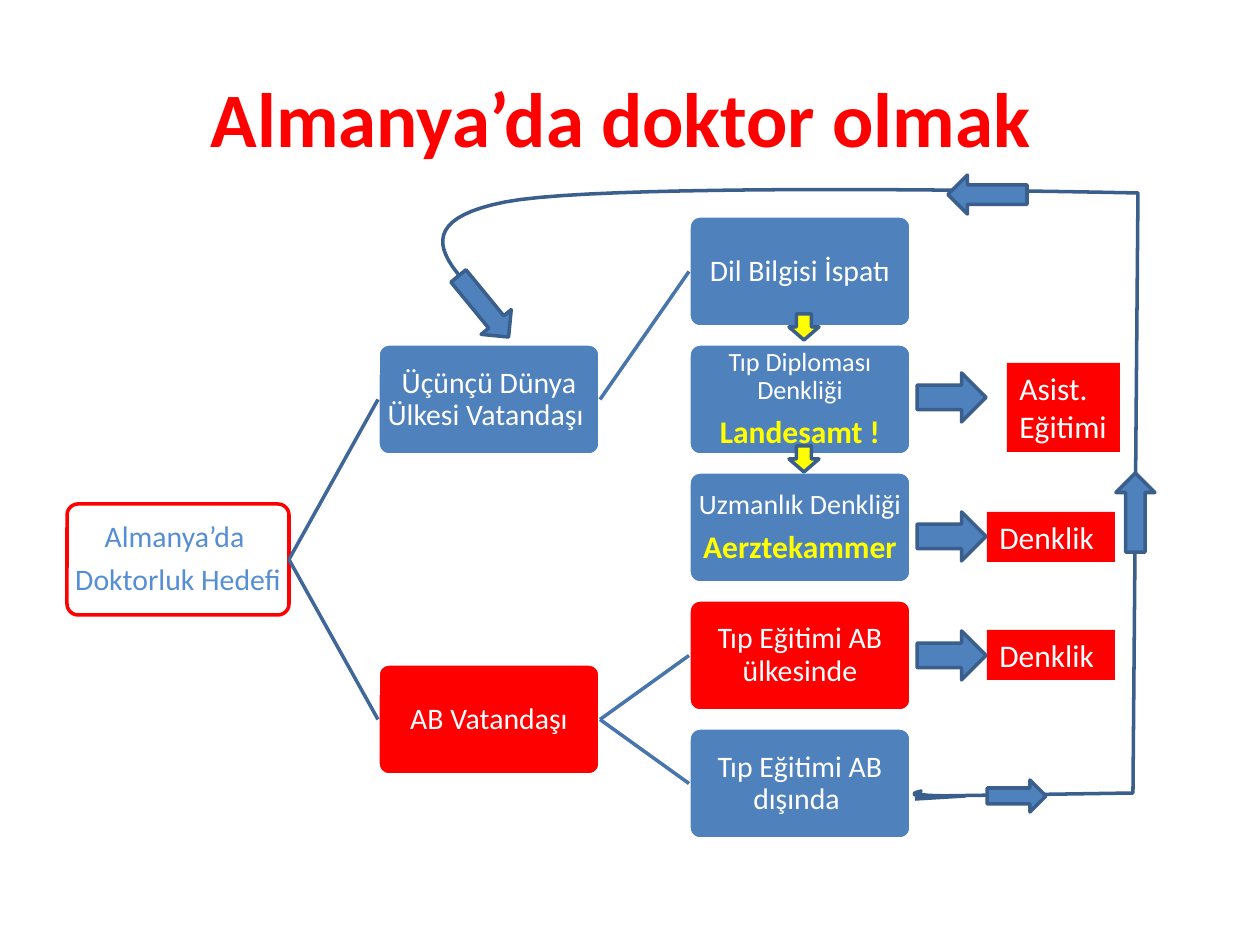
from lxml import etree
from pptx import Presentation
from pptx.dml.color import RGBColor
from pptx.enum.shapes import MSO_CONNECTOR, MSO_SHAPE as Geo
from pptx.enum.text import MSO_ANCHOR, MSO_AUTO_SIZE, PP_ALIGN as Align
from pptx.oxml.ns import qn
from pptx.util import Pt

PX = 914400 / 126
BLUE, EDGE, RED, WHITE, YELLOW = "4F81BD", "3A5F8C", "FF0000", "FFFFFF", "FFFF00"
SKY = "558ED5"

# Content
TITLE = "Almanya’da doktor olmak "
# key: (column, row, fill, outline, [(text, size, colour, bold)])
NODES = {
    "goal": (0, 2.25, None, RED, [("Almanya’da ", 17, SKY, False),
                                  ("Doktorluk Hedefi", 17, SKY, False)]),
    "third": (1, 1, BLUE, WHITE, [("Üçünçü Dünya Ülkesi Vatandaşı ", 17, WHITE, False)]),
    "eu": (1, 3.5, RED, WHITE, [("AB Vatandaşı", 17, WHITE, False)]),
    "language": (2, 0, BLUE, WHITE, [("Dil Bilgisi İspatı", 17, WHITE, False)]),
    "diploma": (2, 1, BLUE, WHITE, [("Tıp Diploması Denkliği", 15, WHITE, False),
                                    ("Landesamt !", 18, YELLOW, True)]),
    "specialty": (2, 2, BLUE, WHITE, [("Uzmanlık Denkliği", 16, WHITE, False),
                                      ("Aerztekammer", 18, YELLOW, True)]),
    "in_eu": (2, 3, RED, WHITE, [("Tıp Eğitimi AB ülkesinde", 17, WHITE, False)]),
    "outside": (2, 4, BLUE, WHITE, [("Tıp Eğitimi AB dışında ", 17, WHITE, False)]),
}
LINKS = [("goal", "third", "3F6797"), ("goal", "eu", "3F6797"),
         ("third", "language", "4875AC"), ("eu", "in_eu", "4875AC"),
         ("eu", "outside", "4875AC")]
OUTCOMES = [(["Asist.", "Eğitimi"], (1007, 363, 113, 89)),
            (["Denklik"], (987, 512, 128, 50)),
            (["Denklik"], (987, 630, 128, 50))]
# (geometry, box, rotation, fill)
ARROWS = [(Geo.RIGHT_ARROW, (917, top, 69, 49), 0, BLUE) for top in (373, 512, 631)]
ARROWS += [(Geo.DOWN_ARROW, (789, top, 30, 26), 0, YELLOW) for top in (314, 446)]
ARROWS += [(Geo.RIGHT_ARROW, (987, 780, 59, 32), 0, BLUE)]
ARROWS += [(Geo.RIGHT_ARROW, (left, top, 79, 39), turn, BLUE)
           for left, top, turn in ((1096, 493, 270), (948, 175, 180), (444, 287, 50.6))]
# Return path: one point is a straight step, three points are a Bézier step
LOOP_START = (500, 316)
LOOP = [[(450, 270), (399, 223), (505, 202)], [(612, 181), (1138, 193), (1138, 193)],
        [(1133, 793)], [(934, 796)],
        [(898, 796), (922, 791), (921, 791)], [(920, 791), (917, 794), (925, 795)],
        [(932, 796), (965, 796), (965, 796)], [(915, 799)]]

# Grid of nodes
LEFT, TOP, COLUMN_STEP, ROW_STEP = 67, 216, 311, 128
NODE_W, NODE_H = 222, 111


def emu(*lengths):
    return [round(length * PX) for length in lengths]


def rgb(colour):
    return RGBColor.from_string(colour)


def paint(shape, fill, outline):
    shape.shadow.inherit = False
    if fill:
        shape.fill.solid()
        shape.fill.fore_color.rgb = rgb(fill)
    else:
        shape.fill.background()
    if outline:
        shape.line.color.rgb = rgb(outline)
        shape.line.width = Pt(2)
    else:
        shape.line.fill.background()


def write(frame, lines, align):
    frame.text = "\n".join(line[0] for line in lines)
    for paragraph, (_, size, colour, bold) in zip(frame.paragraphs, lines):
        paragraph.alignment = align
        font = paragraph.runs[0].font
        font.name, font.size, font.bold = "Calibri", Pt(size), bold
        font.color.rgb = rgb(colour)


def bezier(p0, p1, p2, p3, steps=24):
    for t in (i / steps for i in range(1, steps + 1)):
        u = 1 - t
        yield [u**3 * a + 3 * u * u * t * b + 3 * u * t * t * c + t**3 * d
               for a, b, c, d in zip(p0, p1, p2, p3)]


def trace(start, path):
    points, last = [], start
    for step in path:
        points += bezier(last, *step) if len(step) == 3 else step
        last = step[-1]
    return points


deck = Presentation()
deck.slide_width, deck.slide_height = emu(1260, 945)
shapes = deck.slides.add_slide(deck.slide_layouts[6]).shapes

# Return path
builder = shapes.build_freeform(*emu(*LOOP_START), scale=1.0)
builder.add_line_segments([emu(*point) for point in trace(LOOP_START, LOOP)], close=False)
paint(builder.convert_to_shape(), None, EDGE)

# Nodes
boxes = {}
for key, (column, row, fill, outline, lines) in NODES.items():
    node = shapes.add_shape(Geo.ROUNDED_RECTANGLE, *emu(
        LEFT + column * COLUMN_STEP, TOP + row * ROW_STEP, NODE_W, NODE_H))
    node.adjustments[0] = 0.1
    paint(node, fill, outline)
    frame = node.text_frame
    frame.word_wrap = True
    frame.vertical_anchor = MSO_ANCHOR.MIDDLE
    frame.margin_left, frame.margin_top, frame.margin_right, frame.margin_bottom = emu(1, 1, 1, 1)
    write(frame, lines, Align.CENTER)
    for paragraph in frame.paragraphs:
        paragraph.line_spacing = 0.9
        paragraph.space_after = Pt(6)
    boxes[key] = node

# Links between nodes
for parent, child, colour in LINKS:
    link = shapes.add_connector(MSO_CONNECTOR.STRAIGHT, 0, 0, 0, 0)
    link.begin_connect(boxes[parent], 3)
    link.end_connect(boxes[child], 1)
    link.line.color.rgb = rgb(colour)
    link.line.width = Pt(2)
    etree.SubElement(link._element.spPr, qn("a:effectLst"))

# Title
heading = shapes.add_textbox(*emu(63, 38, 1134, 157)).text_frame
heading.word_wrap = True
heading.vertical_anchor = MSO_ANCHOR.MIDDLE
write(heading, [(TITLE, 44, RED, True)], Align.CENTER)

# Outcome labels
for words, box in OUTCOMES:
    outcome = shapes.add_shape(Geo.RECTANGLE, *emu(*box))
    paint(outcome, RED, None)
    frame = outcome.text_frame
    frame.word_wrap = False
    frame.auto_size = MSO_AUTO_SIZE.SHAPE_TO_FIT_TEXT
    frame.vertical_anchor = MSO_ANCHOR.TOP
    write(frame, [(word, 18, WHITE, False) for word in words], Align.LEFT)

# Block arrows
for geometry, box, turn, fill in ARROWS:
    arrow = shapes.add_shape(geometry, *emu(*box))
    arrow.rotation = turn
    paint(arrow, fill, EDGE)

deck.save("out.pptx")
